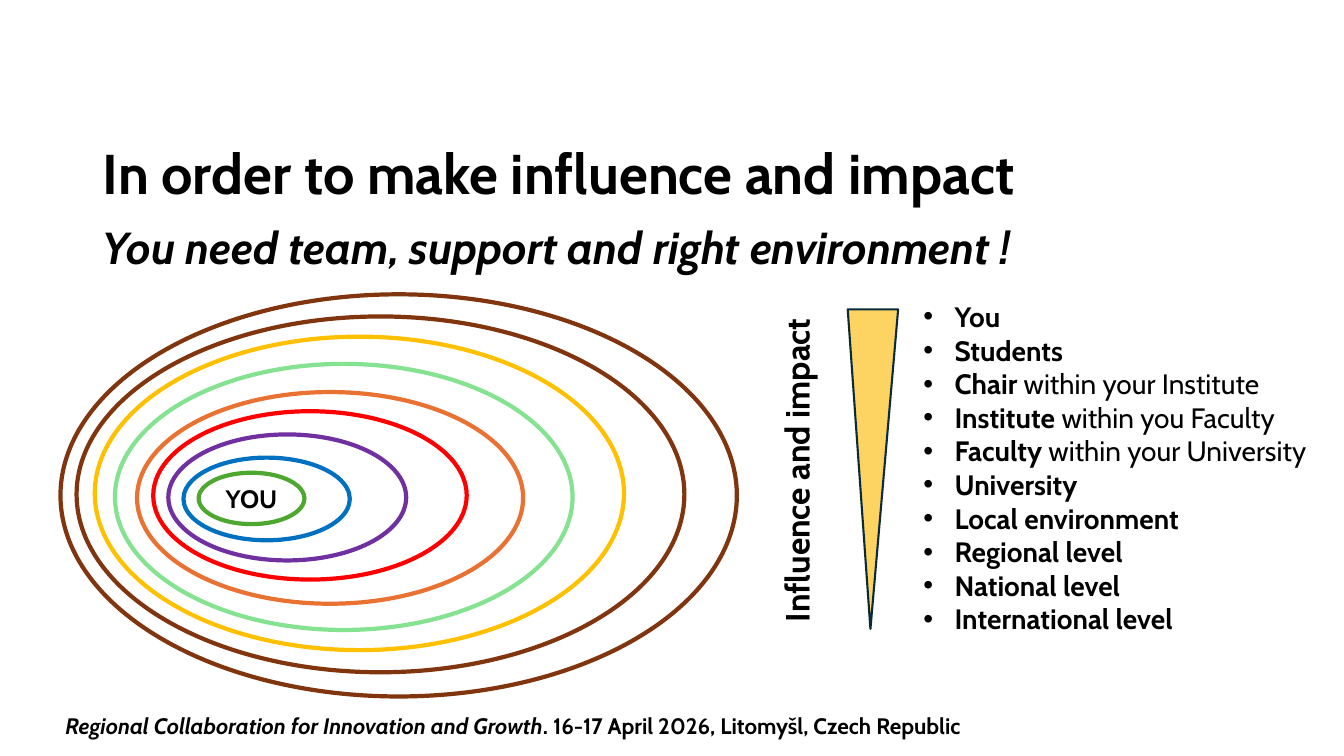
from lxml import etree
from pptx import Presentation
from pptx.dml.color import RGBColor
from pptx.enum.shapes import MSO_SHAPE
from pptx.enum.text import MSO_ANCHOR, MSO_AUTO_SIZE, PP_ALIGN
from pptx.oxml.ns import qn
from pptx.util import Inches, Pt

OVAL, TRIANGLE = MSO_SHAPE.OVAL, MSO_SHAPE.ISOSCELES_TRIANGLE
TOP, MIDDLE = MSO_ANCHOR.TOP, MSO_ANCHOR.MIDDLE
LEFT, CENTER = PP_ALIGN.LEFT, PP_ALIGN.CENTER
FIXED = MSO_AUTO_SIZE.NONE
FONT = "Cabin"
COLORS = {
    "text": "000000", "white": "FFFFFF", "brown": "80350E", "gold": "FFC000",
    "mint": "84E291", "orange": "E97132", "red": "FF0000", "purple": "7030A0",
    "blue": "0070C0", "green": "4EA72E", "wedge": "FDD362", "navy": "092A39",
}

prs = Presentation()
prs.slide_width, prs.slide_height = Inches(13.333), Inches(7.5)
CELL = prs.slide_width / 40  # square grid, 40 columns wide
slide = prs.slides.add_slide(prs.slide_layouts[3])
shapes = slide.shapes


def grid(*cells):
    """Turn left, top, width, height in grid cells into lengths."""
    return [round(cell * CELL) for cell in cells]


def write(shape, paragraphs, size, anchor=TOP, align=LEFT, spacing=1.0,
          bullet=None, indent=0, wrap=True):
    """Fill a shape with paragraphs, each a list of (text, bold, italic)."""
    frame = shape.text_frame
    frame.word_wrap, frame.auto_size = wrap, FIXED
    frame.vertical_anchor = anchor
    for number, runs in enumerate(paragraphs):
        paragraph = frame.add_paragraph() if number else frame.paragraphs[0]
        properties = paragraph._p.get_or_add_pPr()
        properties.set("marL", str(indent))
        properties.set("indent", str(-indent))
        if bullet:
            etree.SubElement(properties, qn("a:buFont")).set("typeface", "Arial")
            etree.SubElement(properties, qn("a:buChar")).set("char", bullet)
        else:
            etree.SubElement(properties, qn("a:buNone"))
        paragraph.alignment, paragraph.line_spacing = align, spacing
        paragraph.space_before = Pt(0)
        for text, bold, italic in runs:
            run = paragraph.add_run()
            run.text = text
            font = run.font
            font.name, font.size, font.bold, font.italic = FONT, Pt(size), bold, italic
            font.color.rgb = RGBColor.from_string(COLORS["text"])


# Title, subtitle and list of levels
title, subtitle, levels = slide.placeholders
for holder, cells in (
    (title, (2.76, 4.35, 34.5, 1.8)),
    (subtitle, (2.76, 6.57, 34.5, 1.98)),
    (levels, (27.18, 8.76, 12.4, 10.41)),
):
    holder.left, holder.top, holder.width, holder.height = grid(*cells)

write(title, [[("In order to make influence and impact", True, False)]], 40,
      anchor=MIDDLE, spacing=0.9)
write(subtitle, [[("You need team, support and right environment !", True, True)]],
      32, spacing=0.9)

level_names = [
    ("You", ""), ("Students", ""),
    ("Chair ", "within your Institute"),
    ("Institute ", "within you Faculty"),
    ("Faculty ", "within your University"),
    ("University", ""), ("Local environment", ""), ("Regional level", ""),
    ("National level", ""), ("International level", ""),
]
level_lines = [
    [(name, True, False)] + ([(place, False, False)] if place else [])
    for name, place in level_names
]
write(levels, level_lines, 20, bullet="•", indent=Inches(0.31))

# Nested rings, from the widest level to the person
rings = [
    ("brown", 1.8, 8.76, 20.13, 11.97),
    ("brown", 2.28, 9.42, 18.09, 10.59),
    ("gold", 2.82, 10.02, 15.75, 9.33),
    ("mint", 3.42, 10.83, 13.62, 7.92),
    ("orange", 4.08, 11.67, 11.49, 6.3),
    ("red", 4.56, 12.24, 9.33, 5.01),
    ("purple", 5.01, 12.93, 7.08, 3.75),
    ("blue", 5.46, 13.62, 4.95, 2.46),
    ("green", 5.91, 14.07, 3.15, 1.53),
]
for color, *cells in rings:
    ring = shapes.add_shape(OVAL, *grid(*cells))
    ring.shadow.inherit = False
    ring.fill.background()
    ring.line.color.rgb = RGBColor.from_string(COLORS[color])
    ring.line.width = Pt(3)

# The last ring is the person in the middle
person = ring
person.fill.solid()
person.fill.fore_color.rgb = RGBColor.from_string(COLORS["white"])
write(person, [[("YOU", True, False)]], 18, anchor=MIDDLE, align=CENTER, wrap=False)

# Wedge that narrows towards the outer levels
wedge = shapes.add_shape(TRIANGLE, *grid(25.23, 9.21, 1.5, 9.51))
wedge.adjustments[0] = 0.55
wedge.rotation = 180
wedge.shadow.inherit = False
wedge.fill.solid()
wedge.fill.fore_color.rgb = RGBColor.from_string(COLORS["wedge"])
wedge.line.color.rgb = RGBColor.from_string(COLORS["navy"])
wedge.line.width = Pt(1.5)

# Upright label beside the wedge
wedge_label = shapes.add_textbox(*grid(22.95, 8.76, 1.83, 10.05))
write(wedge_label, [[("Influence and impact", True, False)]], 24)
wedge_label.text_frame._txBody.bodyPr.set("vert", "vert270")

# Event line at the foot
event = shapes.add_textbox(*grid(1.65, 21.06, 29.13, 1.11))
write(event, [[
    ("Regional Collaboration for Innovation and Growth", True, True),
    (". 16-17 April 2026, Litomyšl, Czech Republic", True, False),
]], 16)

prs.save("out.pptx")
